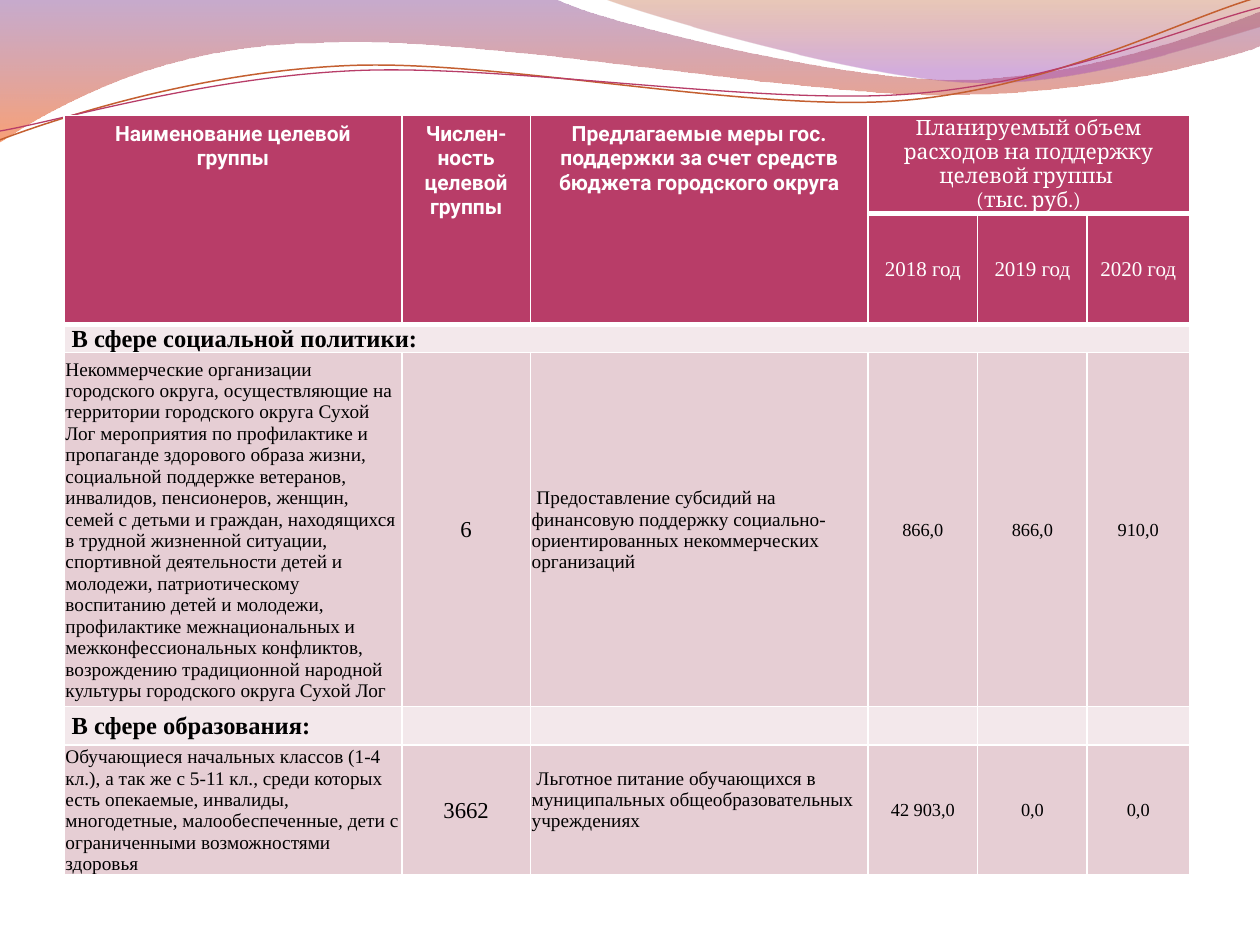
import math
from dataclasses import dataclass
from typing import Optional

from lxml import etree
from pptx import Presentation
from pptx import util as u
from pptx.dml.color import RGBColor
from pptx.enum import text
from pptx.oxml.ns import qn

WHITE = RGBColor(0xFF, 0xFF, 0xFF)
BLACK = RGBColor(0, 0, 0)
CRIMSON = RGBColor(0xB8, 0x3D, 0x68)
PALE = RGBColor(0xF3, 0xE8, 0xEB)
ROSE = RGBColor(0xE6, 0xCE, 0xD4)
PURPLE = RGBColor(0x83, 0x45, 0x91)
ORANGE = RGBColor(0xF3, 0x53, 0x07)
RUST = RGBColor(0xB7, 0x49, 0x15)
VIOLET = RGBColor(0xA1, 0x4B, 0xB4)
COPPER = RGBColor(0xC4, 0x5F, 0x30)

CELL = u.Inches(10) // 1000
TILT = 357.3
SERIF = "Times New Roman"
LEFT, CENTER = text.PP_ALIGN.LEFT, text.PP_ALIGN.CENTER
COLUMNS = (268, 102, 268, 87, 87, 81)
ROWS = (71, 26, 22, 281, 30, 65)


@dataclass(frozen=True)
class Stop:
    position: float
    color: RGBColor
    opacity: int


@dataclass(frozen=True)
class Wave:
    start: tuple
    segments: tuple
    stops: tuple = ()
    line: Optional[RGBColor] = None
    weight: float = 0
    center: Optional[tuple] = None


@dataclass(frozen=True)
class Entry:
    row: int
    col: int
    words: str
    size: float
    align: text.PP_ALIGN = CENTER
    font: str = SERIF
    bold: bool = False
    rows: int = 1
    cols: int = 1
    inset: bool = True
    bottom: int = 0


WAVES = (
    Wave((0, -1), ((440, -1), (476, 17, 664, 63, 758, 63), (853, 63, 958, 26, 1000, 9),
                   (1001, 36), (983, 44, 870, 76, 746, 75), (622, 75, 382, 28, 257, 34),
                   (129, 35, 46, 83, -1, 113), (0, -1)),
         (Stop(0, PURPLE, 45), Stop(1, ORANGE, 55))),
    Wave((479, -1), ((509, 11, 682, 62, 769, 65), (856, 69, 961, 32, 1000, 21),
                     (1000, 0), (479, -1)),
         (Stop(0, RUST, 30), Stop(0.8, VIOLET, 45))),
    Wave((0, 111), ((48, 93, 158, 57, 277, 52), (395, 47, 593, 89, 713, 80),
                    (833, 71, 938, 15, 998, -2)),
         line=COPPER, weight=0.85, center=(499, 57.5)),
    Wave((0, 104), ((47, 96, 164, 61, 283, 56), (403, 51, 597, 83, 717, 75),
                    (836, 67, 941, 21, 1000, 6)),
         line=CRIMSON, weight=0.75, center=(499.5, 59)),
)

HEADINGS = (
    "Наименование целевой группы",
    "Числен-ность целевой группы",
    "Предлагаемые меры гос. поддержки за счет средств бюджета городского округа",
)
SECTIONS = (
    (2, " В сфере социальной политики:", 6),
    (4, " В сфере образования:", 1),
)
GROUPS = (
    (3, "Некоммерческие организации городского округа, осуществляющие на территории "
        "городского округа Сухой Лог мероприятия по профилактике и пропаганде здорового "
        "образа жизни, социальной поддержке ветеранов, инвалидов, пенсионеров, женщин, "
        "семей с детьми и граждан, находящихся в трудной жизненной ситуации, спортивной "
        "деятельности детей и молодежи, патриотическому воспитанию детей и молодежи, "
        "профилактике межнациональных и межконфессиональных конфликтов, возрождению "
        "традиционной народной культуры городского округа Сухой Лог",
     "6",
     " Предоставление субсидий на финансовую поддержку социально-ориентированных "
     "некоммерческих организаций", 0,
     ("866,0", "866,0", "910,0")),
    (5, "Обучающиеся начальных классов (1-4 кл.), а так же с 5-11 кл., среди которых есть "
        "опекаемые, инвалиды, многодетные, малообеспеченные, дети с ограниченными "
        "возможностями здоровья",
     "3662",
     " Льготное питание обучающихся в муниципальных общеобразовательных учреждениях", 17,
     ("42 903,0", "0,0", "0,0")),
)


def table_entries() -> list[Entry]:
    entries = [Entry(0, c, words, 12, font="Roboto", bold=True, rows=2, inset=False)
               for c, words in enumerate(HEADINGS)]
    entries.append(Entry(0, 3, "Планируемый объем расходов на поддержку целевой группы "
                               "\n(тыс. руб.)", 12, font="Cambria", cols=3))
    entries += [Entry(1, 3 + i, f"{2018 + i} год", 12) for i in range(3)]
    entries += [Entry(r, 0, words, 14, LEFT, bold=True, cols=cols)
                for r, words, cols in SECTIONS]
    for r, group, count, measure, bottom, sums in GROUPS:
        entries += [Entry(r, 0, group, 11, LEFT), Entry(r, 1, count, 13),
                    Entry(r, 2, measure, 11, LEFT, bottom=bottom)]
        entries += [Entry(r, 3 + i, amount, 10.5) for i, amount in enumerate(sums)]
    return entries


def level(point: tuple, center: Optional[tuple]) -> tuple:
    if center is None:
        return point
    angle = math.radians(360 - TILT)
    dx, dy = point[0] - center[0], point[1] - center[1]
    return (center[0] + dx * math.cos(angle) - dy * math.sin(angle),
            center[1] + dx * math.sin(angle) + dy * math.cos(angle))


def bend_curves(sp, segments: tuple) -> None:
    lines = iter(list(sp.element.spPr.iter(qn("a:lnTo"))))
    for seg in segments:
        first = next(lines)
        if len(seg) == 6:
            first.tag_name = None
            curve = etree.Element(qn("a:cubicBezTo"))
            first.addprevious(curve)
            for ln in (first, next(lines), next(lines)):
                curve.append(ln[0])
                ln.getparent().remove(ln)


def draw_wave(s, wave: Wave) -> None:
    points = [wave.start] + [seg[i:i + 2] for seg in wave.segments
                             for i in range(0, len(seg), 2)]
    scaled = [(x * CELL, y * CELL) for x, y in (level(p, wave.center) for p in points)]
    fb = s.shapes.build_freeform(*scaled[0], scale=1)
    fb.add_line_segments(scaled[1:], close=bool(wave.stops))
    sp = fb.convert_to_shape()
    bend_curves(sp, wave.segments)
    sp.shadow.inherit = False
    if wave.stops:
        sp.line.fill.background()
        sp.fill.gradient()
        sp.fill.gradient_angle = 270
        for target, stop in zip(sp.fill.gradient_stops, wave.stops):
            target.position = stop.position
            target.color.rgb = stop.color
        for color, stop in zip(sp.element.spPr.iter(qn("a:srgbClr")), wave.stops):
            etree.SubElement(color, qn("a:alpha"), val=str(stop.opacity * 1000))
    else:
        sp.rotation = TILT
        sp.fill.background()
        sp.line.color.rgb = wave.line
        sp.line.width = u.Pt(wave.weight)


def inset_cell(cell, top: int = 1, bottom: int = 0) -> None:
    cell.vertical_anchor = text.MSO_ANCHOR.MIDDLE
    cell.margin_left = cell.margin_right = CELL
    cell.margin_top, cell.margin_bottom = top * CELL, bottom * CELL


def style_cell(cell, row: int) -> None:
    heavy = {"lnT": row in (1, 2), "lnB": row < 2}
    tc_pr = cell._tc.get_or_add_tcPr()
    for side in ("lnL", "lnR", "lnT", "lnB"):
        ln = etree.SubElement(tc_pr, qn(f"a:{side}"),
                              w=str(u.Pt(3 if heavy.get(side) else 1)))
        solid = etree.SubElement(ln, qn("a:solidFill"))
        etree.SubElement(solid, qn("a:srgbClr"), val=str(WHITE))
    cell.fill.solid()
    cell.fill.fore_color.rgb = CRIMSON if row < 2 else ROSE if row % 2 else PALE
    if row >= 2:
        inset_cell(cell, top=0)


def fill_entry(table, entry: Entry) -> None:
    cell = table.cell(entry.row, entry.col)
    if entry.rows * entry.cols > 1:
        cell.merge(table.cell(entry.row + entry.rows - 1, entry.col + entry.cols - 1))
    if entry.inset:
        inset_cell(cell, bottom=entry.bottom)
    tf = cell.text_frame
    tf.text = entry.words
    for p in tf.paragraphs:
        p.alignment = entry.align
        p.font.size = u.Pt(entry.size)
        p.font.name = entry.font
        p.font.bold = entry.bold
        p.font.color.rgb = WHITE if entry.row < 2 else BLACK


def draw_table(s) -> None:
    frame = s.shapes.add_table(len(ROWS), len(COLUMNS), 51 * CELL, u.Inches(0.915),
                               sum(COLUMNS) * CELL, 558 * CELL)
    table = frame.table
    table.horz_banding = False
    for column, width in zip(table.columns, COLUMNS):
        column.width = width * CELL
    for r, height in enumerate(ROWS):
        table.rows[r].height = height * CELL
        for c in range(len(COLUMNS)):
            style_cell(table.cell(r, c), r)
    for entry in table_entries():
        fill_entry(table, entry)
    frame.height = 558 * CELL


def main() -> None:
    prs = Presentation()
    prs.slide_width, prs.slide_height = 1000 * CELL, 750 * CELL
    s = prs.slides.add_slide(prs.slide_layouts[6])
    for wave in WAVES:
        draw_wave(s, wave)
    draw_table(s)
    prs.save("out.pptx")


if __name__ == "__main__":
    main()
